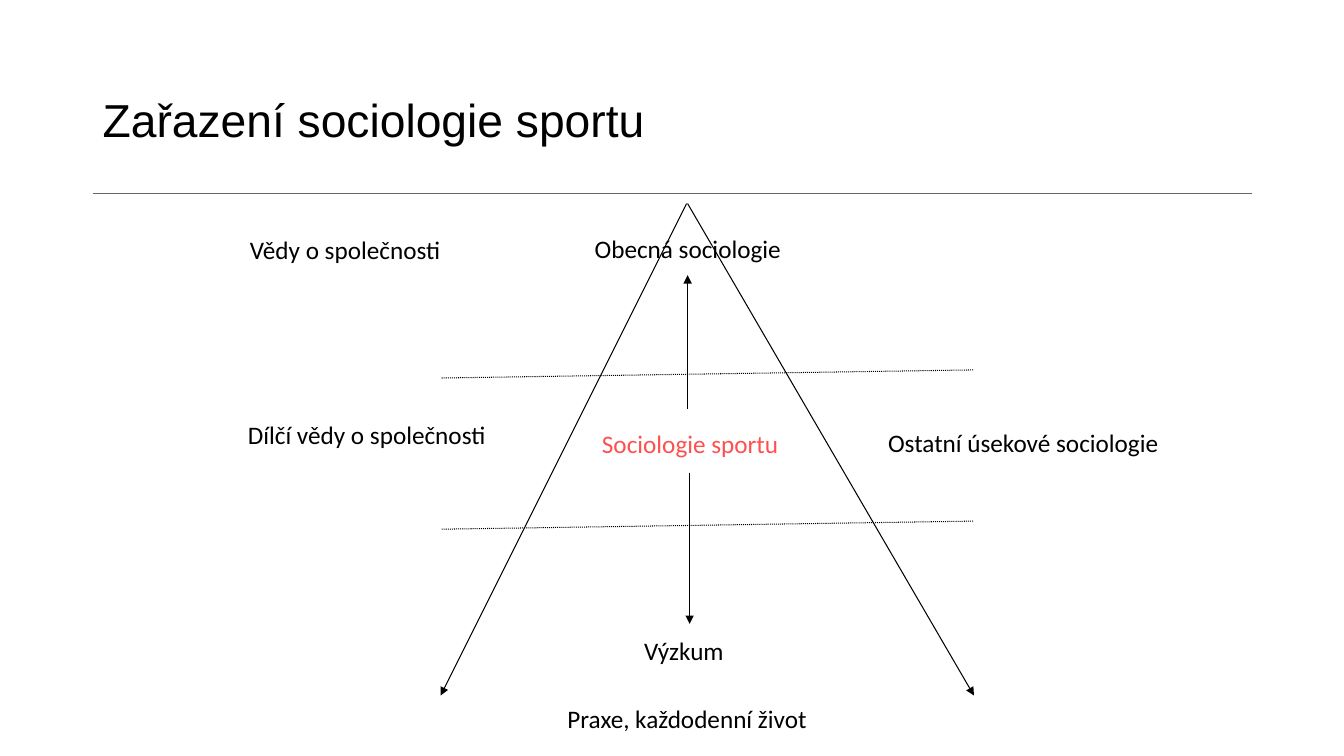
from dataclasses import dataclass

from lxml.etree import SubElement
from pptx import Presentation
from pptx.dml.color import RGBColor
from pptx.enum.dml import MSO_LINE
from pptx.enum.shapes import MSO_CONNECTOR
from pptx.enum.text import MSO_ANCHOR, PP_ALIGN
from pptx.oxml.ns import qn
from pptx.util import Inches, Pt


@dataclass(frozen=True)
class Theme:
    ink: RGBColor = RGBColor(0x00, 0x00, 0x00)
    accent: RGBColor = RGBColor(0xFF, 0x50, 0x50)
    rule: RGBColor = RGBColor(0x66, 0x66, 0x66)
    title_font: str = "Arial"
    label_font: str = "Calibri"
    title_size: Pt = Pt(33)
    label_size: Pt = Pt(18)
    line_width: Pt = Pt(0.75)


THEME = Theme()
LABEL_HEIGHT = 0.4

LABELS = [
    # text, left, top, width
    ("Vědy o společnosti", 2.38, 2.28, 2.11),
    ("Obecná sociologie", 5.8, 2.27, 2.07),
    ("Dílčí vědy o společnosti", 2.36, 4.11, 2.59),
    ("Ostatní úsekové sociologie", 8.71, 4.19, 2.97),
    ("Výzkum", 6.29, 6.25, 1.3),
    ("Praxe, každodenní život", 5.53, 6.93, 2.6),
]

ARROWS = [
    ((6.81, 2.02), (4.37, 6.9)),
    ((6.82, 2.02), (9.66, 6.9)),
    ((6.84, 4.69), (6.84, 6.19)),
    ((6.82, 4.06), (6.82, 2.73)),
]

LEVEL_BORDERS = [3.75, 5.25]


def add_text(slide, text, left, top, width, height, font=THEME.label_font,
             size=THEME.label_size, color=THEME.ink, wrap=False,
             anchor=MSO_ANCHOR.TOP, align=PP_ALIGN.LEFT):
    """Add a one-line text box and return its paragraph."""
    frame = slide.shapes.add_textbox(
        Inches(left), Inches(top), Inches(width), Inches(height)).text_frame
    frame.word_wrap = wrap
    frame.vertical_anchor = anchor
    paragraph = frame.paragraphs[0]
    paragraph.alignment = align
    run = paragraph.add_run()
    run.text = text
    run.font.name = font
    run.font.size = size
    run.font.color.rgb = color
    return paragraph


def add_line(slide, start, end, color=THEME.ink, dash=None, arrow=False):
    connector = slide.shapes.add_connector(
        MSO_CONNECTOR.STRAIGHT, *map(Inches, start + end))
    connector.line.color.rgb = color
    connector.line.width = THEME.line_width
    if dash is not None:
        connector.line.dash_style = dash
    if arrow:
        SubElement(connector.line._get_or_add_ln(), qn("a:tailEnd"), type="triangle")
    SubElement(connector._element.spPr, qn("a:effectLst"))


def add_heading(slide):
    add_line(slide, (0.92, 1.92), (12.42, 1.92), THEME.rule)
    title = add_text(slide, "Zařazení sociologie sportu", 0.92, 0.92, 11.5, 0.92,
                     THEME.title_font, THEME.title_size, wrap=True)
    title.line_spacing = 0.9


def add_pyramid(slide):
    for start, end in ARROWS:
        add_line(slide, start, end, arrow=True)
    for border in LEVEL_BORDERS:
        add_line(slide, (4.38, border), (9.66, border - 0.08),
                 dash=MSO_LINE.ROUND_DOT)


def add_labels(slide):
    add_text(slide, "Sociologie sportu", 5.54, 3.94, 2.61, 0.92,
             color=THEME.accent, anchor=MSO_ANCHOR.MIDDLE, align=PP_ALIGN.CENTER)
    for text, left, top, width in LABELS:
        add_text(slide, text, left, top, width, LABEL_HEIGHT)


def main():
    presentation = Presentation()
    presentation.slide_width = Inches(13.33)
    presentation.slide_height = Inches(7.5)
    slide = presentation.slides.add_slide(presentation.slide_layouts[6])
    add_heading(slide)
    add_pyramid(slide)
    add_labels(slide)
    presentation.save("out.pptx")


if __name__ == "__main__":
    main()
